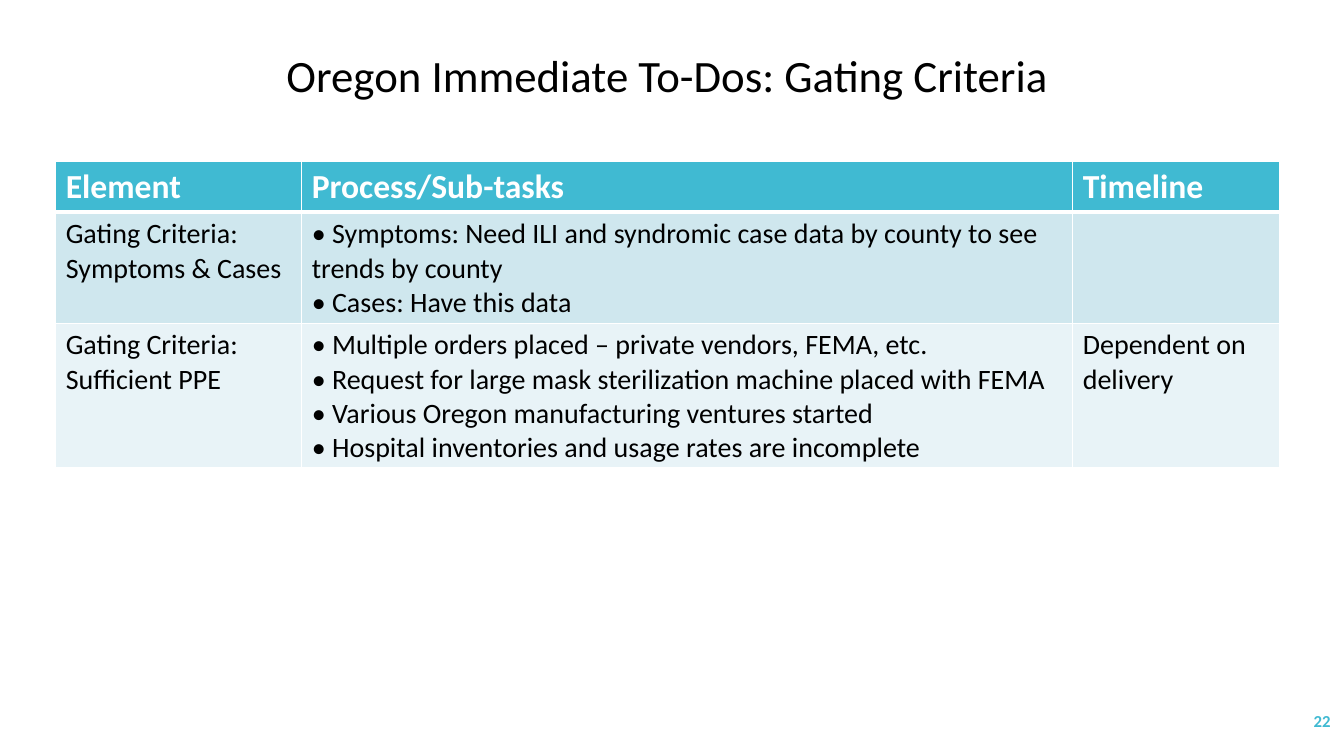
import pptx
import pptx.dml.color
import pptx.enum.text
import pptx.oxml.ns
import pptx.util
from lxml import etree

Pt = pptx.util.Pt
Align = pptx.enum.text.PP_ALIGN
Anchor = pptx.enum.text.MSO_ANCHOR

FONT = "Calibri"
COLORS = {
    "teal": "40BAD2",
    "pale": "CFE7EE",
    "light": "E8F3F7",
    "white": "FFFFFF",
    "black": "000000",
}
WIDTHS = [175.7, 550.8, 147.6]
HEIGHTS = [36, 79.2, 103]
FILLS = ["teal", "pale", "light"]
ROWS = [
    ["Element", "Process/Sub-tasks", "Timeline"],
    [
        "Gating Criteria: Symptoms & Cases",
        "• Symptoms: Need ILI and syndromic case data by county to see trends by county\n"
        "• Cases: Have this data",
        "",
    ],
    [
        "Gating Criteria: Sufficient PPE",
        "• Multiple orders placed – private vendors, FEMA, etc.\n"
        "• Request for large mask sterilization machine placed with FEMA\n"
        "• Various Oregon manufacturing ventures started\n"
        "• Hospital inventories and usage rates are incomplete",
        "Dependent on delivery",
    ],
]


def rgb(name):
    return pptx.dml.color.RGBColor.from_string(COLORS[name])


def set_text(frame, text, size, color, bold=False, align=Align.LEFT):
    frame.text = text
    frame.word_wrap = True
    for para in frame.paragraphs:
        para.alignment = align
        para.font.size = Pt(size)
        for run in para.runs:
            run.font.name = FONT
            run.font.size = Pt(size)
            run.font.bold = bold
            run.font.color.rgb = rgb(color)


def add_text(slide, box, text, size, color, bold, align, anchor):
    frame = slide.shapes.add_textbox(*map(Pt, box)).text_frame
    set_text(frame, text, size, color, bold, align)
    frame.vertical_anchor = anchor


def set_edges(cell, widths):
    """Draw white borders; widths are left, right, top, bottom in points."""
    qn = pptx.oxml.ns.qn
    props = cell._tc.get_or_add_tcPr()
    for spot, (side, width) in enumerate(zip("LRTB", widths)):
        line = etree.Element(qn("a:ln" + side), w=str(Pt(width)))
        fill = etree.SubElement(line, qn("a:solidFill"))
        etree.SubElement(fill, qn("a:srgbClr"), val=COLORS["white"])
        props.insert(spot, line)


def add_grid(slide, left, top):
    frame = slide.shapes.add_table(
        len(ROWS), len(WIDTHS), Pt(left), Pt(top), Pt(sum(WIDTHS)), Pt(sum(HEIGHTS))
    )
    table = frame.table
    for col, width in zip(table.columns, WIDTHS):
        col.width = Pt(width)
    for r, texts in enumerate(ROWS):
        table.rows[r].height = Pt(HEIGHTS[r])
        head = r == 0
        for c, text in enumerate(texts):
            cell = table.cell(r, c)
            cell.fill.solid()
            cell.fill.fore_color.rgb = rgb(FILLS[r])
            size, color = (24, "white") if head else (20, "black")
            set_text(cell.text_frame, text, size, color, head)
            set_edges(cell, [1, 1, 3 if r == 1 else 1, 3 if head else 1])


def main():
    deck = pptx.Presentation()
    deck.slide_width, deck.slide_height = Pt(960), Pt(540)
    slide = deck.slides.add_slide(deck.slide_layouts[6])
    add_text(slide, (837.4, 500.4, 120.2, 28.8), "22", 12, "teal", True,
             Align.RIGHT, Anchor.MIDDLE)
    add_grid(slide, 39.8, 115.5)
    add_text(slide, (128.2, 30.2, 697, 46), "Oregon Immediate To-Dos: Gating Criteria",
             32, "black", False, Align.CENTER, Anchor.TOP)
    deck.save("out.pptx")


if __name__ == "__main__":
    main()
